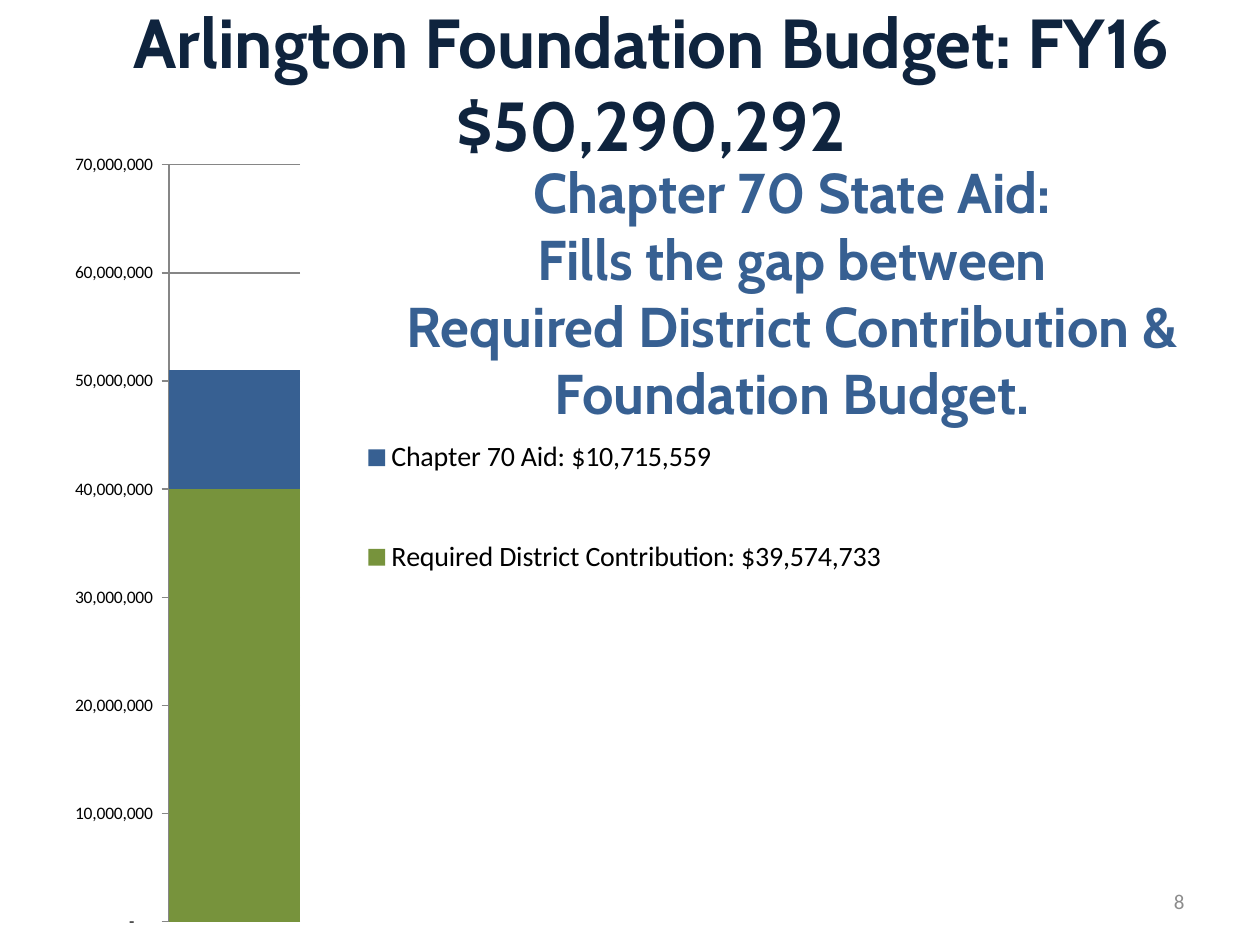
from pptx import Presentation
from pptx.chart.data import CategoryChartData
from pptx.dml.color import RGBColor
from pptx.enum.chart import XL_CHART_TYPE as ChartType, XL_LEGEND_POSITION as LegendPos, XL_TICK_MARK as Tick
from pptx.enum.text import MSO_ANCHOR as Anchor, PP_ALIGN as Align
from pptx.oxml import parse_xml
from pptx.oxml.ns import nsdecls, qn
from pptx.util import Inches, Pt

COLORS = {
    "navy": "0F243E",
    "blue": "376092",
    "green": "77933C",
    "axis": "868686",
    "number": "8C8C8C",
    "black": "000000",
}


def rgb(name):
    return RGBColor.from_string(COLORS[name])


def chart_layout(x, y, w, h, target=""):
    """Return a manual chart layout; lengths are fractions of the chart."""
    return parse_xml(
        f'<c:layout {nsdecls("c")}><c:manualLayout>{target}'
        '<c:xMode val="edge"/><c:yMode val="edge"/>'
        f'<c:x val="{x}"/><c:y val="{y}"/><c:w val="{w}"/><c:h val="{h}"/>'
        '</c:manualLayout></c:layout>'
    )


prs = Presentation()
prs.slide_width, prs.slide_height = Inches(10), Inches(7.5)
slide = prs.slides.add_slide(prs.slide_layouts[6])

# Stacked column: district contribution plus state aid
funding = [
    ("Required District Contribution: $39,574,733", 40_000_000, "green"),
    ("Chapter 70 Aid: $10,715,559", 11_000_000, "blue"),
]
budget_data = CategoryChartData()
budget_data.categories = ["1"]
for label, amount, _ in funding:
    budget_data.add_series(label, [amount])
budget = slide.shapes.add_chart(
    ChartType.COLUMN_STACKED, Inches(0.18), Inches(1.13), Inches(9.37), Inches(6.37), budget_data
).chart
budget.has_title = False
budget.font.name = "Calibri"
budget.font.size = Pt(10)
budget.font.color.rgb = rgb("black")

column = budget.plots[0]
column.gap_width = 0
column.overlap = 100
column.vary_by_categories = False
for series, (_, _, color) in zip(column.series, funding):
    series.format.fill.solid()
    series.format.fill.fore_color.rgb = rgb(color)

budget.category_axis.visible = False
dollars = budget.value_axis
dollars.minimum_scale, dollars.maximum_scale = 0, 70_000_000
dollars.major_unit = 10_000_000
dollars.major_tick_mark = Tick.OUTSIDE
dollars.tick_labels.number_format = '_-* #,##0_-;\\-* #,##0_-;_-* "-"??_-;_-@_'
dollars.tick_labels.number_format_is_linked = False
dollars.has_major_gridlines = True
for line in (dollars.format.line, dollars.major_gridlines.format.line):
    line.color.rgb = rgb("axis")
    line.width = Pt(0.75)

budget.has_legend = True
legend = budget.legend
legend.position = LegendPos.RIGHT
legend.include_in_layout = False
legend.font.name = "Calibri"
legend.font.size = Pt(16)
legend.font.color.rgb = rgb("black")

plot_area = budget.element.find(".//" + qn("c:plotArea"))
legend_xml = budget.element.find(".//" + qn("c:legend"))
for part in (plot_area, legend_xml):
    for old_layout in part.findall(qn("c:layout")):
        part.remove(old_layout)
plot_area.insert(0, chart_layout(0.124, 0.028, 0.111, 0.943, '<c:layoutTarget val="inner"/>'))
legend_pos = legend_xml.find(qn("c:legendPos"))
legend_xml.insert(0 if legend_pos is None else 1, chart_layout(0.28, 0.29, 0.46, 0.33))

# Explanation, heading and slide number
texts = [
    ("Chapter 70 State Aid:\nFills the gap between\nRequired District Contribution & Foundation Budget.",
     (2.71, 1.28, 7.16, 2.07), "Cabin", 32, "blue", True, Align.CENTER),
    ("Arlington Foundation Budget: FY16\n$50,290,292",
     (0.67, 0.03, 9, 1.25), "Cabin", 39.6, "navy", True, Align.CENTER),
    ("8", (7.17, 6.95, 2.33, 0.4), "Calibri", 12, "number", False, Align.RIGHT),
]
for words, place, font_name, size, color, bold, align in texts:
    frame = slide.shapes.add_textbox(*map(Inches, place)).text_frame
    frame.word_wrap = True
    frame.vertical_anchor = Anchor.MIDDLE
    paragraph = frame.paragraphs[0]
    paragraph.text = words
    paragraph.alignment = align
    paragraph.font.name = font_name
    paragraph.font.size = Pt(size)
    paragraph.font.bold = bold
    paragraph.font.color.rgb = rgb(color)

prs.save("out.pptx")
